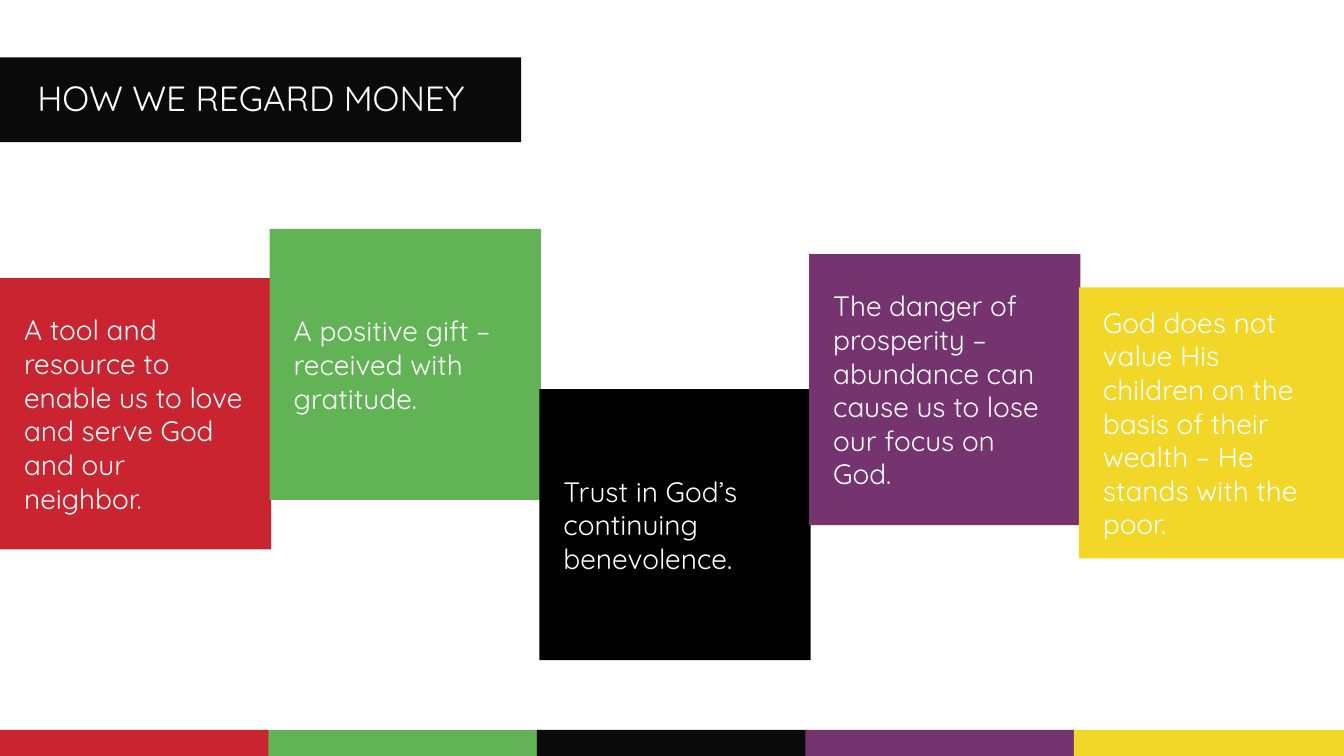
"""Build the slide on how we regard money: a banner title and five staggered cards."""
from dataclasses import dataclass

from pptx import Presentation
from pptx.dml.color import RGBColor
from pptx.enum.shapes import MSO_SHAPE as Preset
from pptx.enum.text import MSO_ANCHOR as Anchor, MSO_AUTO_SIZE as AutoSize, PP_ALIGN as Align
from pptx.shapes.autoshape import Shape
from pptx.slide import Slide
from pptx.util import Inches, Pt

WIDTH, HEIGHT = 13.33, 7.5
STRIPE_TOP, STRIPE_WIDTH = 7.24, 2.68
CARD_SIZE, CARD_STEP = 2.69, 2.675
TEXT_WIDTH, LINE_HEIGHT, INSETS = 2.41, 0.336, 0.1


@dataclass(frozen=True)
class Theme:
    font: str = "Quicksand"
    title_size: int = 25
    body_size: int = 20
    text: str = "FFFFFF"
    red: str = "CA2430"
    green: str = "61B355"
    ink: str = "0A0A0A"
    black: str = "000000"
    purple: str = "753470"
    yellow: str = "F2D728"


@dataclass(frozen=True)
class Area:
    left: float
    top: float
    width: float
    height: float

    def lengths(self) -> tuple[Inches, ...]:
        return tuple(Inches(side) for side in (self.left, self.top, self.width, self.height))


@dataclass(frozen=True)
class Card:
    text: str
    color: str
    top: float
    lines: int


THEME = Theme()
STRIPES = (THEME.red, THEME.green, THEME.ink, THEME.purple, THEME.yellow)
CARDS = (
    Card("A tool and resource to enable us to love and serve God and our neighbor.",
         THEME.red, 2.76, 6),
    Card("A positive gift – received with gratitude.", THEME.green, 2.27, 3),
    Card("Trust in God’s continuing benevolence.", THEME.black, 3.86, 3),
    Card("The danger of prosperity – abundance can cause us to lose our focus on God.",
         THEME.purple, 2.52, 6),
    Card("God does not value His children on the basis of their wealth – He stands with the poor.",
         THEME.yellow, 2.85, 7),
)


def add_block(page: Slide, area: Area, color: str) -> Shape:
    block = page.shapes.add_shape(Preset.RECTANGLE, *area.lengths())
    block.shadow.inherit = False
    block.fill.solid()
    block.fill.fore_color.rgb = RGBColor.from_string(color)
    block.line.fill.background()
    return block


def write(box: Shape, text: str, size: int) -> None:
    frame = box.text_frame
    frame.word_wrap = True
    frame.auto_size = AutoSize.NONE
    frame.vertical_anchor = Anchor.MIDDLE
    para = frame.paragraphs[0]
    para.alignment = Align.LEFT
    span = para.add_run()
    span.text = text
    span.font.name = THEME.font
    span.font.size = Pt(size)
    span.font.color.rgb = RGBColor.from_string(THEME.text)


def add_stripes(page: Slide) -> None:
    step = (WIDTH - STRIPE_WIDTH) / (len(STRIPES) - 1)
    for column, color in enumerate(STRIPES):
        add_block(page, Area(column * step, STRIPE_TOP, STRIPE_WIDTH, HEIGHT - STRIPE_TOP), color)


def add_title(page: Slide) -> None:
    banner = add_block(page, Area(0, 0.57, 5.17, 0.84), THEME.ink)
    title = page.shapes.title
    title.left, title.top, title.width, title.height = Area(0.27, 0.71, 4.62, 0.52).lengths()
    write(title, "HOW WE REGARD MONEY", THEME.title_size)
    banner.element.addnext(title.element)


def add_cards(page: Slide) -> None:
    for column, card in enumerate(CARDS):
        add_block(page, Area(column * CARD_STEP, card.top, CARD_SIZE, CARD_SIZE), card.color)
    margin = (CARD_SIZE - TEXT_WIDTH) / 2
    for column, card in enumerate(CARDS):
        height = card.lines * LINE_HEIGHT + INSETS
        top = card.top + (CARD_SIZE - height) / 2
        area = Area(column * CARD_STEP + margin, top, TEXT_WIDTH, height)
        write(page.shapes.add_textbox(*area.lengths()), card.text, THEME.body_size)


def main() -> None:
    deck = Presentation()
    deck.slide_width, deck.slide_height = Inches(WIDTH), Inches(HEIGHT)
    page = deck.slides.add_slide(deck.slide_layouts.get_by_name("Title Only"))
    add_stripes(page)
    add_title(page)
    add_cards(page)
    deck.save("out.pptx")


if __name__ == "__main__":
    main()
